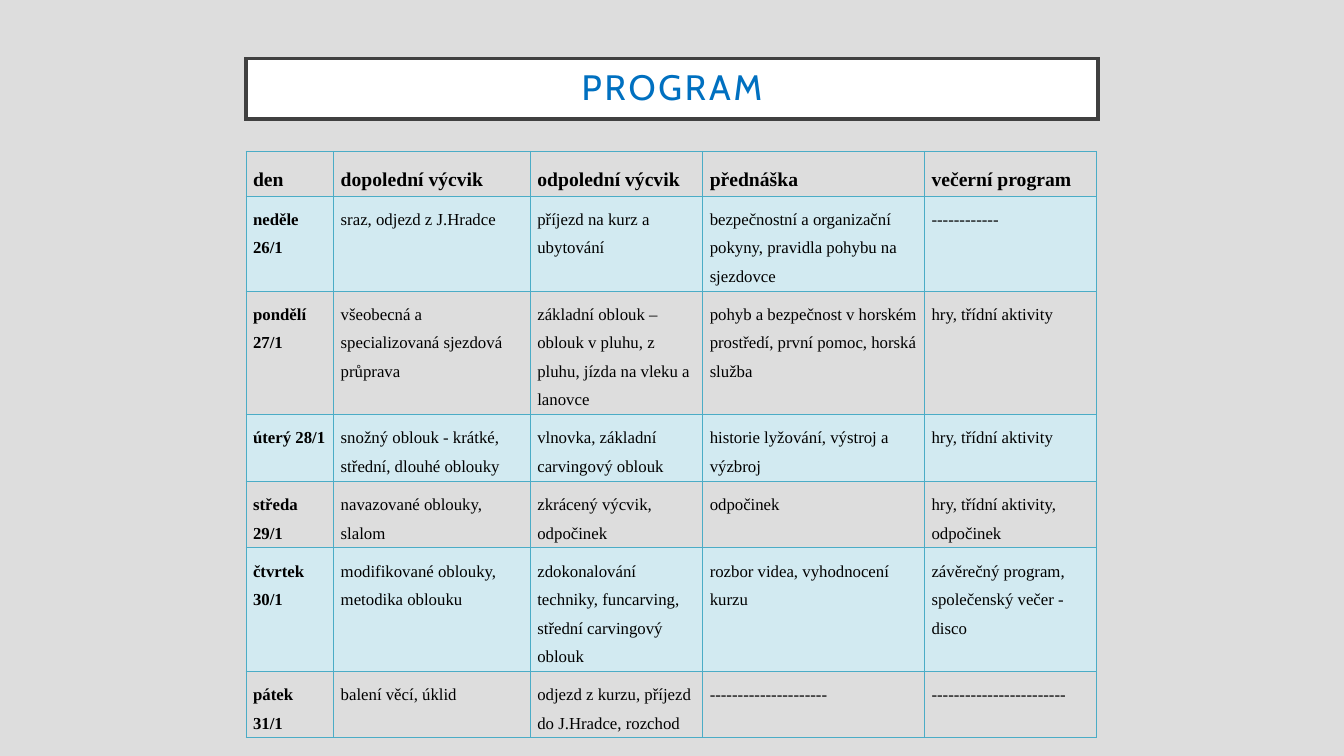
from lxml.etree import SubElement
from pptx import Presentation
from pptx.dml.color import RGBColor
from pptx.enum.text import MSO_ANCHOR, MSO_AUTO_SIZE, PP_ALIGN
from pptx.oxml.ns import qn
from pptx.util import Inches, Pt

COLORS = {
    "background": "DDDDDD",
    "title_fill": "FFFFFF",
    "title_frame": "404040",
    "title_text": "0070C0",
    "grid": "4BACC6",
    "band": "D2EAF1",
    "text": "000000",
}
HEADINGS = ["den", "dopolední výcvik", "odpolední výcvik", "přednáška", "večerní program"]
DAYS = [
    ["neděle 26/1", "sraz, odjezd z J.Hradce", "příjezd na kurz a ubytování",
     "bezpečnostní a organizační pokyny, pravidla pohybu na sjezdovce", "------------"],
    ["pondělí 27/1", "všeobecná a specializovaná sjezdová průprava",
     "základní oblouk – oblouk v pluhu, z pluhu, jízda na vleku a lanovce",
     "pohyb a bezpečnost v horském prostředí, první pomoc, horská služba",
     "hry, třídní aktivity"],
    ["úterý 28/1", "snožný oblouk - krátké, střední, dlouhé oblouky",
     "vlnovka, základní carvingový oblouk", "historie lyžování, výstroj a výzbroj",
     "hry, třídní aktivity"],
    ["středa 29/1", "navazované oblouky, slalom", "zkrácený výcvik,\nodpočinek",
     "odpočinek", "hry, třídní aktivity, odpočinek"],
    ["čtvrtek 30/1", "modifikované oblouky, metodika oblouku",
     "zdokonalování techniky, funcarving, střední carvingový oblouk",
     "rozbor videa, vyhodnocení kurzu", "závěrečný program, společenský večer - disco"],
    ["pátek 31/1", "balení věcí, úklid", "odjezd z kurzu, příjezd do J.Hradce, rozchod",
     "---------------------", "------------------------"],
]
COLUMN_WIDTHS = [0.87, 1.95, 1.71, 2.2, 1.71]
ROW_HEIGHTS = [0.44] + [0.1 + 0.28 * lines for lines in (3, 4, 2, 2, 4, 2)]
CELL_FORMAT = {
    "margin_left": Inches(0.07),
    "margin_right": Inches(0.07),
    "margin_top": Inches(0.05),
    "margin_bottom": Inches(0.05),
    "vertical_anchor": MSO_ANCHOR.TOP,
}
TITLE_FORMAT = {
    "margin_left": Inches(0.2),
    "margin_right": Inches(0.2),
    "margin_top": Inches(0.2),
    "margin_bottom": Inches(0.2),
    "vertical_anchor": MSO_ANCHOR.MIDDLE,
    "word_wrap": True,
    "auto_size": MSO_AUTO_SIZE.NONE,
}


def color(name):
    return RGBColor.from_string(COLORS[name])


def add_borders(cell):
    properties = cell._tc.get_or_add_tcPr()
    for side in ("a:lnL", "a:lnR", "a:lnT", "a:lnB"):
        border = SubElement(properties, qn(side), w=str(Pt(0.75)))
        fill = SubElement(border, qn("a:solidFill"))
        SubElement(fill, qn("a:srgbClr"), val=COLORS["grid"])


presentation = Presentation()
presentation.slide_width = Inches(13.33)
presentation.slide_height = Inches(7.5)
slide = presentation.slides.add_slide(presentation.slide_layouts[5])
slide.background.fill.solid()
slide.background.fill.fore_color.rgb = color("background")

# Framed title
title = slide.shapes.title
title.left, title.top = Inches(2.44), Inches(0.58)
title.width, title.height = Inches(8.45), Inches(0.6)
title.fill.solid()
title.fill.fore_color.rgb = color("title_fill")
title.line.color.rgb = color("title_frame")
title.line.width = Pt(2.5)
SubElement(title.line._get_or_add_ln(), qn("a:miter"), lim="800000")
for attribute, value in TITLE_FORMAT.items():
    setattr(title.text_frame, attribute, value)
heading = title.text_frame.paragraphs[0]
heading.alignment = PP_ALIGN.CENTER
heading.line_spacing = 0.9
heading_run = heading.add_run()
heading_run.text = "PROGRAM"
heading_run.font.name = "Cabin"
heading_run.font.size = Pt(25.2)
heading_run.font.color.rgb = color("title_text")
heading_run.font._element.set("spc", "200")

# Course timetable
timetable = slide.shapes.add_table(
    len(DAYS) + 1, len(HEADINGS), Inches(2.44), Inches(1.5),
    Inches(sum(COLUMN_WIDTHS)), Inches(sum(ROW_HEIGHTS))).table
timetable.first_row = False
timetable.horz_banding = False
for column, width in zip(timetable.columns, COLUMN_WIDTHS):
    column.width = Inches(width)
for row, height in zip(timetable.rows, ROW_HEIGHTS):
    row.height = Inches(height)

# Cell text, with every other row shaded
for row_index, entries in enumerate([HEADINGS] + DAYS):
    is_header = row_index == 0
    for column_index, entry in enumerate(entries):
        cell = timetable.cell(row_index, column_index)
        add_borders(cell)
        if row_index % 2:
            cell.fill.solid()
            cell.fill.fore_color.rgb = color("band")
        else:
            cell.fill.background()
        for attribute, value in CELL_FORMAT.items():
            setattr(cell, attribute, value)
        cell.text_frame.text = entry
        for paragraph in cell.text_frame.paragraphs:
            paragraph.line_spacing = Pt(24.8 if is_header else 20.2)
            font = paragraph.runs[0].font
            font.name = "Times New Roman"
            font.size = Pt(14 if is_header else 12)
            font.bold = is_header or column_index == 0
            font.color.rgb = color("text")

presentation.save("out.pptx")
